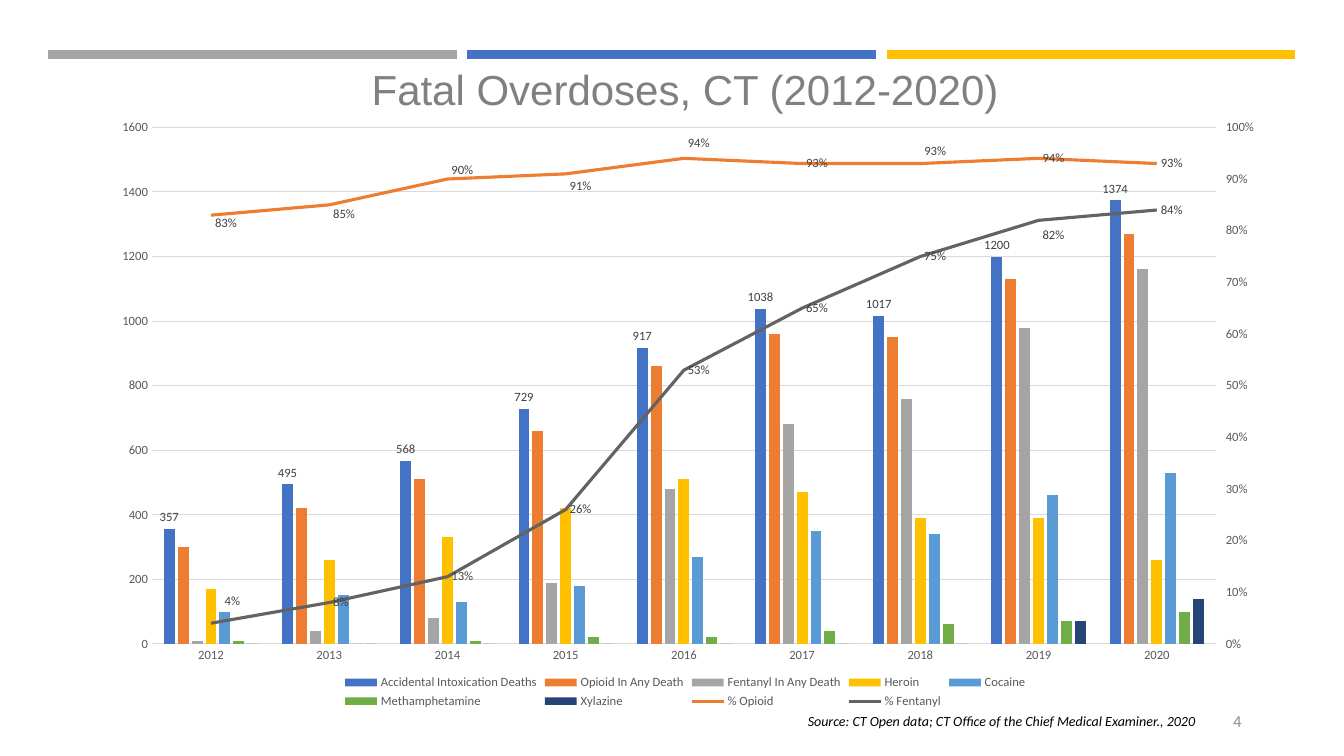
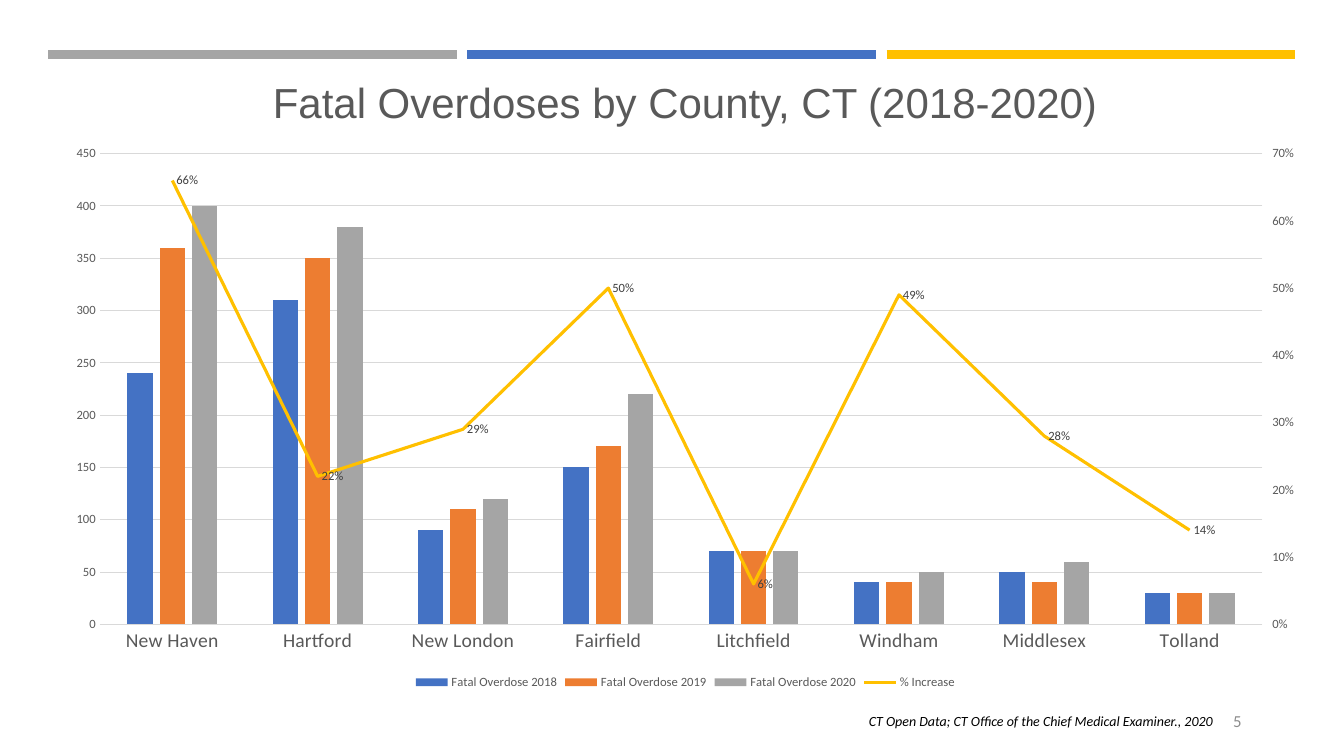
from copy import deepcopy
from dataclasses import dataclass

from lxml.etree import SubElement
from pptx import Presentation
from pptx.chart.axis import ValueAxis
from pptx.chart.data import CategoryChartData
from pptx.dml.color import RGBColor
from pptx.enum.chart import (XL_CHART_TYPE, XL_LABEL_POSITION, XL_LEGEND_POSITION,
                             XL_MARKER_STYLE, XL_TICK_LABEL_POSITION, XL_TICK_MARK)
from pptx.enum.shapes import MSO_CONNECTOR
from pptx.enum.text import MSO_ANCHOR, PP_ALIGN
from pptx.oxml import parse_xml
from pptx.oxml.ns import nsdecls, qn
from pptx.util import Pt


@dataclass(frozen=True)
class Theme:
    head: str = "Arial"
    body: str = "Calibri"
    black: str = "000000"
    ink: str = "595959"
    label: str = "404040"
    soft: str = "808080"
    page: str = "8C8C8C"
    grid: str = "D9D9D9"
    blue: str = "4472C4"
    orange: str = "ED7D31"
    gray: str = "A5A5A5"
    gold: str = "FFC000"
    sky: str = "5B9BD5"
    green: str = "70AD47"
    navy: str = "264478"
    slate: str = "636363"
    title: float = 30
    note: float = 10
    folio: float = 12
    small: float = 9
    large: float = 14
    band: float = 6.5
    curve: float = 2.25
    hair: float = 0.75


class Deck:
    def __init__(self, theme):
        self.theme = theme
        self.show = Presentation()
        self.show.slide_width, self.show.slide_height = Pt(960), Pt(540)
        self.slide = None

    def page(self, number):
        theme = self.theme
        self.slide = self.show.slides.add_slide(self.show.slide_layouts[6])
        for i, color in enumerate((theme.gray, theme.blue, theme.gold)):
            self.band(34.5 + i * 299.4, color)
        self.text((678, 500.5, 216, 29), str(number), theme.body, theme.folio,
                  theme.page, PP_ALIGN.RIGHT, anchor=MSO_ANCHOR.MIDDLE)

    def band(self, left, color):
        band = self.slide.shapes.add_connector(
            MSO_CONNECTOR.STRAIGHT, Pt(left), Pt(39), Pt(left + 291.6), Pt(39))
        self.stroke(band.line, color, self.theme.band)
        SubElement(band.element.spPr, qn("a:effectLst"))

    def stroke(self, line, color, width):
        line.color.rgb = RGBColor.from_string(color)
        line.width = Pt(width)

    def font(self, font, size, color, name=None):
        font.name = name or self.theme.body
        font.size = Pt(size)
        font.color.rgb = RGBColor.from_string(color)

    def text(self, box, words, name, size, color, align=PP_ALIGN.LEFT,
             anchor=MSO_ANCHOR.TOP):
        frame = self.slide.shapes.add_textbox(*map(Pt, box)).text_frame
        frame.word_wrap = True
        frame.vertical_anchor = anchor
        line = frame.paragraphs[0]
        line.text = words
        line.alignment = align
        self.font(line.font, size, color, name)
        return line

    def title(self, top, words, color):
        line = self.text((19, top, 941, 64), words, self.theme.head,
                         self.theme.title, color, PP_ALIGN.CENTER)
        line.line_spacing = 0.9

    def source(self, left, words):
        line = self.text((left, 505.5, 299, 19.5), words, self.theme.body,
                         self.theme.note, self.theme.black)
        line.font.italic = True

    def chart(self, box, cats, bars, lines, scale, size):
        theme = self.theme
        data = CategoryChartData()
        data.categories = cats
        for name, color, vals in bars:
            data.add_series(name, vals, "General")
        for name, color, vals in lines:
            data.add_series(name, [v / 100 for v in vals], "0%")
        chart = self.slide.shapes.add_chart(
            XL_CHART_TYPE.COLUMN_CLUSTERED, *map(Pt, box), data).chart
        chart.has_title = False
        self.font(chart.font, theme.note, theme.black)
        chart.has_legend = True
        chart.legend.position = XL_LEGEND_POSITION.BOTTOM
        chart.legend.include_in_layout = False
        self.font(chart.legend.font, theme.small, theme.ink)

        self.axis(chart.category_axis, size)
        self.stroke(chart.category_axis.format.line, theme.grid, theme.hair)
        left = chart.value_axis
        self.axis(left, theme.small)
        left.format.line.fill.background()
        self.stroke(left.major_gridlines.format.line, theme.grid, theme.hair)
        self.range(left, *scale[0])
        self.split(chart, len(bars), scale[1])

        cols, rates = chart.plots
        cols.gap_width, cols.overlap = 219, -27
        cols.vary_by_categories = False
        for item, (name, color, vals) in zip(cols.series, bars):
            item.format.fill.solid()
            item.format.fill.fore_color.rgb = RGBColor.from_string(color)
        for item, (name, color, vals) in zip(rates.series, lines):
            self.stroke(item.format.line, color, theme.curve)
            item.marker.style = XL_MARKER_STYLE.NONE
            item.smooth = False
            self.labels(item, "0%", XL_LABEL_POSITION.RIGHT)
        for lead in chart.element.xpath(".//c:showLeaderLines"):
            lead.set("val", "0")
        return chart

    def axis(self, axis, size):
        axis.major_tick_mark = axis.minor_tick_mark = XL_TICK_MARK.NONE
        self.font(axis.tick_labels.font, size, self.theme.ink)

    def range(self, axis, top, step):
        axis.minimum_scale, axis.maximum_scale, axis.major_unit = 0, top, step

    def split(self, chart, count, scale):
        root = chart.element
        cols = root.xpath(".//c:barChart")[0]
        rates = parse_xml(
            f'<c:lineChart {nsdecls("c")}><c:grouping val="standard"/>'
            '<c:varyColors val="0"/><c:marker val="1"/>'
            '<c:axId val="501"/><c:axId val="502"/></c:lineChart>')
        mark = rates.find(qn("c:marker"))
        for item in cols.findall(qn("c:ser"))[count:]:
            for flag in item.findall(qn("c:invertIfNegative")):
                item.remove(flag)
            mark.addprevious(item)
        cols.addnext(rates)

        first = root.xpath(".//c:valAx")[0]
        cross = first.find(qn("c:crosses"))
        if first.find(qn("c:crossBetween")) is None:
            cross.addnext(parse_xml(
                f'<c:crossBetween {nsdecls("c")} val="between"/>'))
        right = deepcopy(first)
        base = deepcopy(root.xpath(".//c:catAx")[0])
        first.addnext(right)
        right.addnext(base)
        for axis, own, other in ((base, "501", "502"), (right, "502", "501")):
            axis.find(qn("c:axId")).set("val", own)
            axis.find(qn("c:crossAx")).set("val", other)
        right.find(qn("c:axPos")).set("val", "r")
        right.find(qn("c:crosses")).set("val", "max")
        base.find(qn("c:delete")).set("val", "1")
        side = ValueAxis(right)
        side.has_major_gridlines = False
        side.tick_label_position = XL_TICK_LABEL_POSITION.HIGH
        side.tick_labels.number_format = "0%"
        side.tick_labels.number_format_is_linked = False
        self.range(side, *scale)

    def labels(self, item, form, place):
        labels = item.data_labels
        labels.show_value = True
        labels.number_format = form
        labels.number_format_is_linked = False
        labels.position = place
        self.font(labels.font, self.theme.small, self.theme.label)

    def layout(self, box, spot, inner=False):
        wide, high = box[2:]
        parts = dict(zip("xywh", (v / d for v, d in
                                  zip(spot, (wide, high, wide, high)))))
        body = '<c:layoutTarget val="inner"/>' if inner else ""
        if inner:
            body += '<c:xMode val="edge"/><c:yMode val="edge"/>'
        body += "".join(f'<c:{key} val="{val:.4f}"/>' for key, val in parts.items())
        return parse_xml(f'<c:layout {nsdecls("c")}><c:manualLayout>{body}'
                         '</c:manualLayout></c:layout>')

    def plot(self, chart, box, spot):
        area = chart.element.xpath(".//c:plotArea")[0]
        for old in area.findall(qn("c:layout")):
            area.remove(old)
        area.insert(0, self.layout(box, spot, True))

    def nudge(self, chart, box, row, moves):
        for i, move in moves.items():
            label = chart.plots[1].series[row].points[i].data_label
            self.font(label.font, self.theme.small, self.theme.label)
            label.position = XL_LABEL_POSITION.RIGHT
            index = chart.element.xpath(
                f".//c:lineChart/c:ser[{row + 1}]/c:dLbls/c:dLbl/c:idx[@val='{i}']")[0]
            index.addnext(parse_xml(
                f'<c:numFmt {nsdecls("c")} formatCode="0%" sourceLinked="0"/>'))
            index.addnext(self.layout(box, move))


def trend(deck):
    theme = deck.theme
    box = (74.5, 78, 830, 431)
    deck.page(4)
    bars = [
        ("Accidental Intoxication Deaths", theme.blue,
         (357, 495, 568, 729, 917, 1038, 1017, 1200, 1374)),
        ("Opioid In Any Death", theme.orange,
         (300, 420, 510, 660, 860, 960, 950, 1130, 1270)),
        ("Fentanyl In Any Death", theme.gray,
         (10, 40, 80, 190, 480, 680, 760, 980, 1160)),
        ("Heroin", theme.gold, (170, 260, 330, 420, 510, 470, 390, 390, 260)),
        ("Cocaine", theme.sky, (100, 150, 130, 180, 270, 350, 340, 460, 530)),
        ("Methamphetamine", theme.green, (10, 0, 10, 20, 20, 40, 60, 70, 100)),
        ("Xylazine", theme.navy, (0, 0, 0, 0, 0, 0, 0, 70, 140)),
    ]
    lines = [
        ("% Opioid", theme.orange, (83, 85, 90, 91, 94, 93, 93, 94, 93)),
        ("% Fentanyl", theme.slate, (4, 8, 13, 26, 53, 65, 75, 82, 84)),
    ]
    years = [str(year) for year in range(2012, 2021)]
    chart = deck.chart(box, years, bars, lines, ((1600, 200), (1, 0.1)), theme.small)
    deck.labels(chart.plots[0].series[0], "General", XL_LABEL_POSITION.OUTSIDE_END)
    deck.plot(chart, box, (34, 13, 760, 369))
    deck.nudge(chart, box, 0, {0: (0, 6), 1: (0, 7), 2: (0, -6), 3: (0, 9),
                               4: (0, -11), 6: (0, -9)})
    deck.nudge(chart, box, 1, {0: (7, -16), 7: (0, 11)})
    deck.title(46, "Fatal Overdoses, CT (2012-2020)", theme.soft)
    deck.source(570, "Source: CT Open data; CT Office of the Chief Medical Examiner., 2020")


def county(deck):
    theme = deck.theme
    deck.page(5)
    deck.title(55.5, "Fatal Overdoses by County, CT (2018-2020)", theme.ink)
    deck.source(613.5, "CT Open Data; CT Office of the Chief Medical Examiner., 2020")
    names = ("New Haven", "Hartford", "New London", "Fairfield", "Litchfield",
             "Windham", "Middlesex", "Tolland")
    bars = [
        ("Fatal Overdose 2018", theme.blue, (240, 310, 90, 150, 70, 40, 50, 30)),
        ("Fatal Overdose 2019", theme.orange, (360, 350, 110, 170, 70, 40, 40, 30)),
        ("Fatal Overdose 2020", theme.gray, (400, 380, 120, 220, 70, 50, 60, 30)),
    ]
    lines = [("% Increase", theme.gold, (66, 22, 29, 50, 6, 49, 28, 14))]
    deck.chart((36.5, 96.5, 906, 399), names, bars, lines,
               ((450, 50), (0.7, 0.1)), theme.large)


def main():
    deck = Deck(Theme())
    trend(deck)
    county(deck)
    deck.show.save("out.pptx")


if __name__ == "__main__":
    main()
